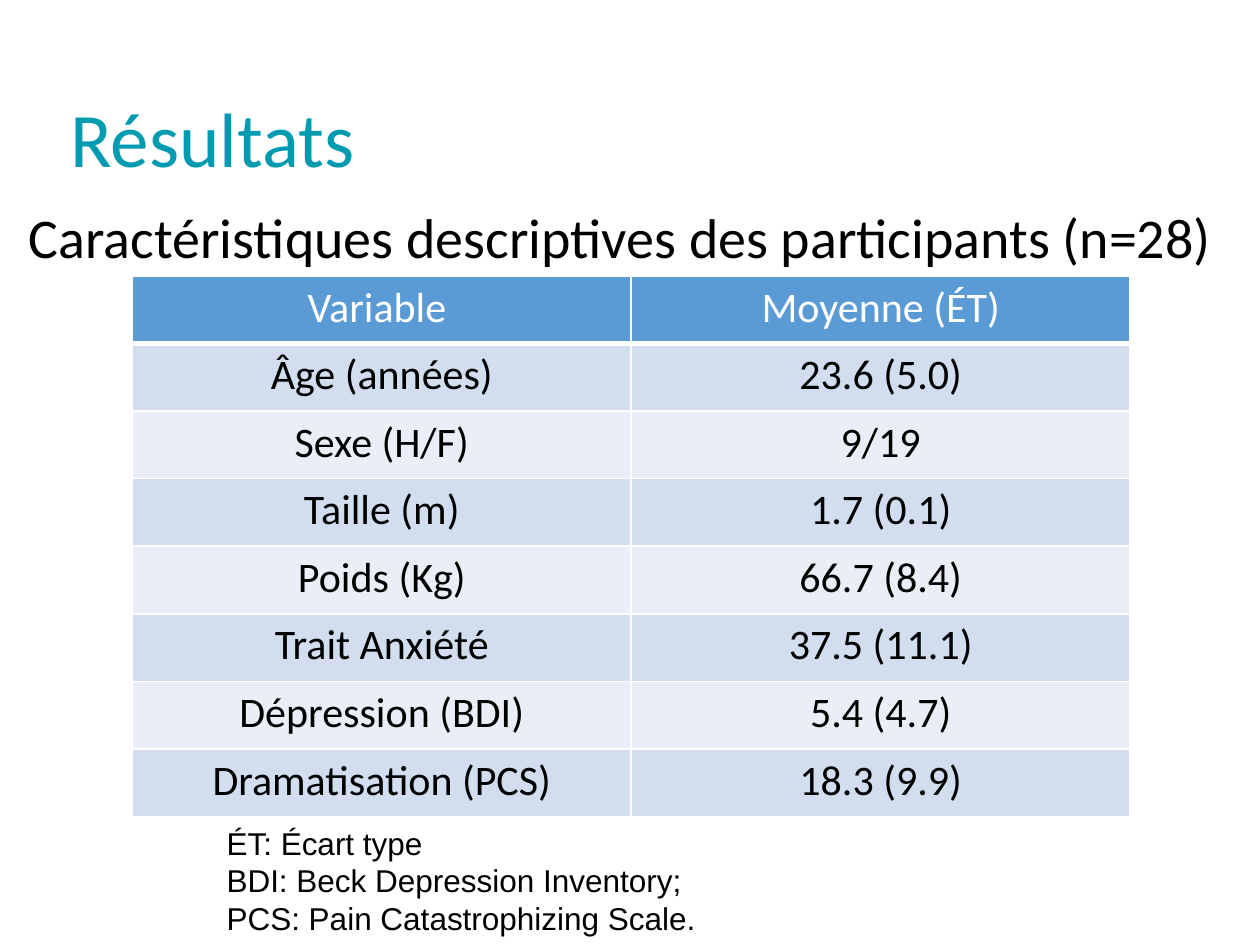
import dataclasses

import lxml.etree
import pptx
import pptx.dml.color
import pptx.enum.text
import pptx.oxml.ns
import pptx.util

WIDTH, HEIGHT = 10, 7.5
COLORS = {
    "title": "009AB1",
    "text": "000000",
    "white": "FFFFFF",
    "header": "5B9BD5",
    "odd_row": "D2DEEF",
    "even_row": "EAEFF7",
}
MIDDLE = pptx.enum.text.MSO_ANCHOR.MIDDLE
TOP = pptx.enum.text.MSO_ANCHOR.TOP
CENTER = pptx.enum.text.PP_ALIGN.CENTER


@dataclasses.dataclass(frozen=True)
class Area:
    """A rectangle given as shares of the slide's width and height."""
    left: float
    top: float
    width: float
    height: float

    def lengths(self) -> list[int]:
        return [
            pptx.util.Inches(share * side)
            for share, side in (
                (self.left, WIDTH), (self.top, HEIGHT),
                (self.width, WIDTH), (self.height, HEIGHT),
            )
        ]


@dataclasses.dataclass(frozen=True)
class TextBlock:
    area: Area
    text: str
    size: int
    font: str = "Calibri"
    color: str = "text"
    anchor: pptx.enum.text.MSO_ANCHOR = TOP
    line_spacing: float = 1.0


BLOCKS = [
    TextBlock(Area(0.046, 0.096, 0.862, 0.11), "Résultats", 44,
              color="title", anchor=MIDDLE, line_spacing=0.9),
    TextBlock(Area(0.013, 0.208, 1, 0.085),
              "Caractéristiques descriptives des participants (n=28)", 32),
    TextBlock(Area(0.17, 0.865, 0.5, 0.135),
              "ÉT: Écart type\nBDI: Beck Depression Inventory;\n"
              "PCS: Pain Catastrophizing Scale.", 18, font="Arial"),
]
TABLE_AREA = Area(0.105, 0.292, 0.792, 0.572)
ROWS = [
    ("Variable ", "Moyenne (ÉT)"),
    ("Âge (années)", "23.6 (5.0)"),
    ("Sexe (H/F)", "9/19"),
    ("Taille (m)", "1.7 (0.1)"),
    ("Poids (Kg)", "66.7 (8.4)"),
    ("Trait Anxiété", "37.5 (11.1)"),
    ("Dépression (BDI)", "5.4 (4.7)"),
    ("Dramatisation (PCS)", "18.3 (9.9)"),
]


def rgb(name: str) -> pptx.dml.color.RGBColor:
    return pptx.dml.color.RGBColor.from_string(COLORS[name])


def style_spans(para, size: int, font: str, color: str) -> None:
    for span in para.runs:
        span.font.size = pptx.util.Pt(size)
        span.font.name = font
        span.font.color.rgb = rgb(color)


def add_text(page, block: TextBlock) -> None:
    box = page.shapes.add_textbox(*block.area.lengths())
    frame = box.text_frame
    frame.word_wrap = True
    frame.vertical_anchor = block.anchor
    frame.text = block.text
    for para in frame.paragraphs:
        para.line_spacing = block.line_spacing
        style_spans(para, block.size, block.font, block.color)


def add_borders(cell, bottom_points: int) -> None:
    properties = cell._tc.get_or_add_tcPr()
    qn = pptx.oxml.ns.qn
    for tag, points in (("a:lnL", 1), ("a:lnR", 1), ("a:lnT", 1), ("a:lnB", bottom_points)):
        line = lxml.etree.SubElement(properties, qn(tag), w=str(pptx.util.Pt(points)))
        fill = lxml.etree.SubElement(line, qn("a:solidFill"))
        lxml.etree.SubElement(fill, qn("a:srgbClr"), val=COLORS["white"])


def add_results_table(page, area: Area, rows: list[tuple[str, str]]) -> None:
    left, top, width, height = area.lengths()
    table = page.shapes.add_table(len(rows), len(rows[0]), left, top, width, height).table
    for row_index, texts in enumerate(rows):
        is_header = row_index == 0
        fill = "header" if is_header else ("odd_row" if row_index % 2 else "even_row")
        for column_index, text in enumerate(texts):
            cell = table.cell(row_index, column_index)
            add_borders(cell, bottom_points=3 if is_header else 1)
            cell.fill.solid()
            cell.fill.fore_color.rgb = rgb(fill)
            cell.text_frame.text = text
            para = cell.text_frame.paragraphs[0]
            para.alignment = CENTER
            style_spans(para, 24, "Calibri", "white" if is_header else "text")
            for span in para.runs:
                span.font.bold = False


def main() -> None:
    deck = pptx.Presentation()
    deck.slide_width = pptx.util.Inches(WIDTH)
    deck.slide_height = pptx.util.Inches(HEIGHT)
    page = deck.slides.add_slide(deck.slide_layouts[6])
    page.background.fill.solid()
    page.background.fill.fore_color.rgb = rgb("white")
    for block in BLOCKS:
        add_text(page, block)
    add_results_table(page, TABLE_AREA, ROWS)
    deck.save("out.pptx")


if __name__ == "__main__":
    main()
